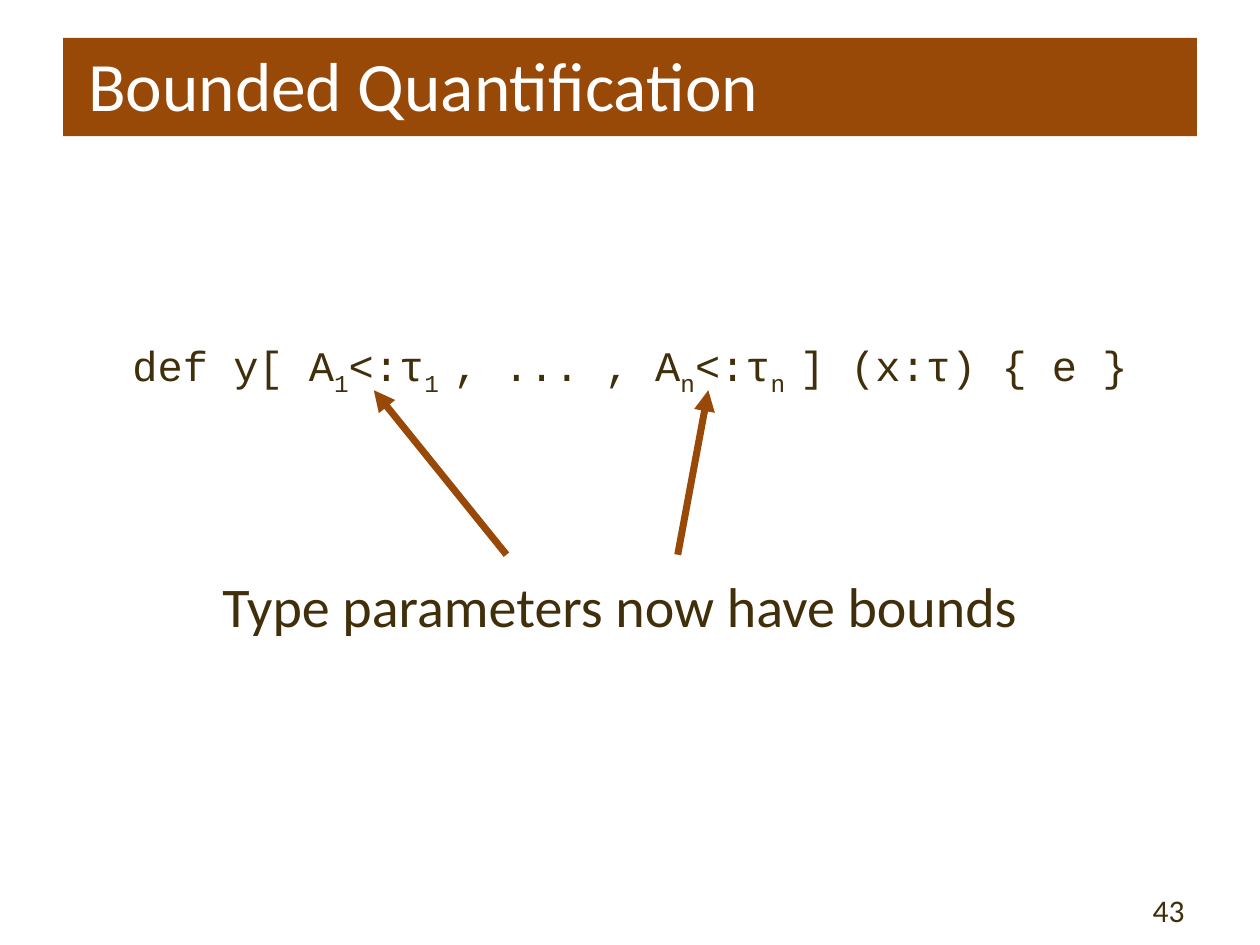
from lxml.etree import SubElement
from pptx import Presentation
from pptx.dml.color import RGBColor
from pptx.enum.shapes import MSO_CONNECTOR
from pptx.enum.text import MSO_ANCHOR, MSO_AUTO_SIZE, PP_ALIGN
from pptx.oxml.ns import qn
from pptx.util import Inches, Pt

RUST = RGBColor(0x98, 0x48, 0x07)
BROWN = RGBColor(0x40, 0x2F, 0x0A)
WHITE = RGBColor(0xFF, 0xFF, 0xFF)
WIDE, HIGH = Inches(10), Inches(7.5)

HEAD = (0.05, 0.04, 0.9, 0.104)
CODE = (0.05, 0.29, 0.9, 0.2)
NOTE = (0.042, 0.413, 0.9, 0.348)
PAGE = (0.717, 0.936, 0.233, 0.053)

PARTS = [("def y[ A", 0), ("1", 1), ("<:τ", 0), ("1 ", 1), (", ... , A", 0),
         ("n", 1), ("<:τ", 0), ("n ", 1), ("] (x:τ) { e }", 0)]
RAYS = [((0.4, 0.5), (0.283, 0)), ((0.551, 0.5), (0.578, 0))]


def style(item, form):
    for name, value in form.items():
        setattr(item, name, value)


def scale(box):
    x, y, w, h = box
    return int(x * WIDE), int(y * HIGH), int(w * WIDE), int(h * HIGH)


def write(shape, parts, align, face, size, color, frame):
    text = shape.text_frame
    style(text, {"word_wrap": True, "auto_size": MSO_AUTO_SIZE.NONE, **frame})
    para = text.paragraphs[0]
    para.alignment = align
    for word, sub in parts:
        run = para.add_run()
        run.text = word
        style(run.font, {"name": face, "size": Pt(size)})
        run.font.color.rgb = color
        if sub:
            run.font._element.set("baseline", "-25000")


def head(slide, box):
    title = slide.shapes.title
    style(title, dict(zip(("left", "top", "width", "height"), scale(box))))
    title.fill.solid()
    title.fill.fore_color.rgb = RUST
    write(title, [("Bounded Quantification", 0)], PP_ALIGN.LEFT, "Calibri", 39.6, WHITE,
          {"vertical_anchor": MSO_ANCHOR.MIDDLE, "margin_left": Inches(0.2),
           "margin_top": 0, "margin_right": Inches(0.1), "margin_bottom": Inches(0.05)})


def code(slide, box):
    shape = slide.shapes.add_textbox(*scale(box))
    write(shape, PARTS, PP_ALIGN.CENTER, "Courier New", 24, BROWN,
          {"vertical_anchor": MSO_ANCHOR.MIDDLE})


def arrow(group, start, end):
    line = group.shapes.add_connector(MSO_CONNECTOR.STRAIGHT, *start, *end)
    line.line.color.rgb = RUST
    line.line.width = Pt(4)
    SubElement(line.line._get_or_add_ln(), qn("a:tailEnd"), type="triangle")
    SubElement(line._element.spPr, qn("a:effectLst"))


def note(slide, box):
    x, y, w, h = scale(box)
    group = slide.shapes.add_group_shape()
    shape = group.shapes.add_textbox(x, y + h // 2, w, h // 2)
    write(shape, [("Type parameters now have bounds", 0)], PP_ALIGN.CENTER,
          "Calibri", 32, BROWN,
          {"vertical_anchor": MSO_ANCHOR.TOP, "margin_top": Inches(0.13)})
    for ray in RAYS:
        arrow(group, *[(int(x + a * w), int(y + b * h)) for a, b in ray])


def page(slide, box):
    shape = slide.shapes.add_textbox(*scale(box))
    write(shape, [("43", 0)], PP_ALIGN.RIGHT, "Calibri", 18, BROWN,
          {"vertical_anchor": MSO_ANCHOR.TOP})


def main():
    deck = Presentation()
    style(deck, {"slide_width": WIDE, "slide_height": HIGH})
    slide = deck.slides.add_slide(deck.slide_layouts[5])
    head(slide, HEAD)
    page(slide, PAGE)
    code(slide, CODE)
    note(slide, NOTE)
    deck.save("out.pptx")


if __name__ == "__main__":
    main()
